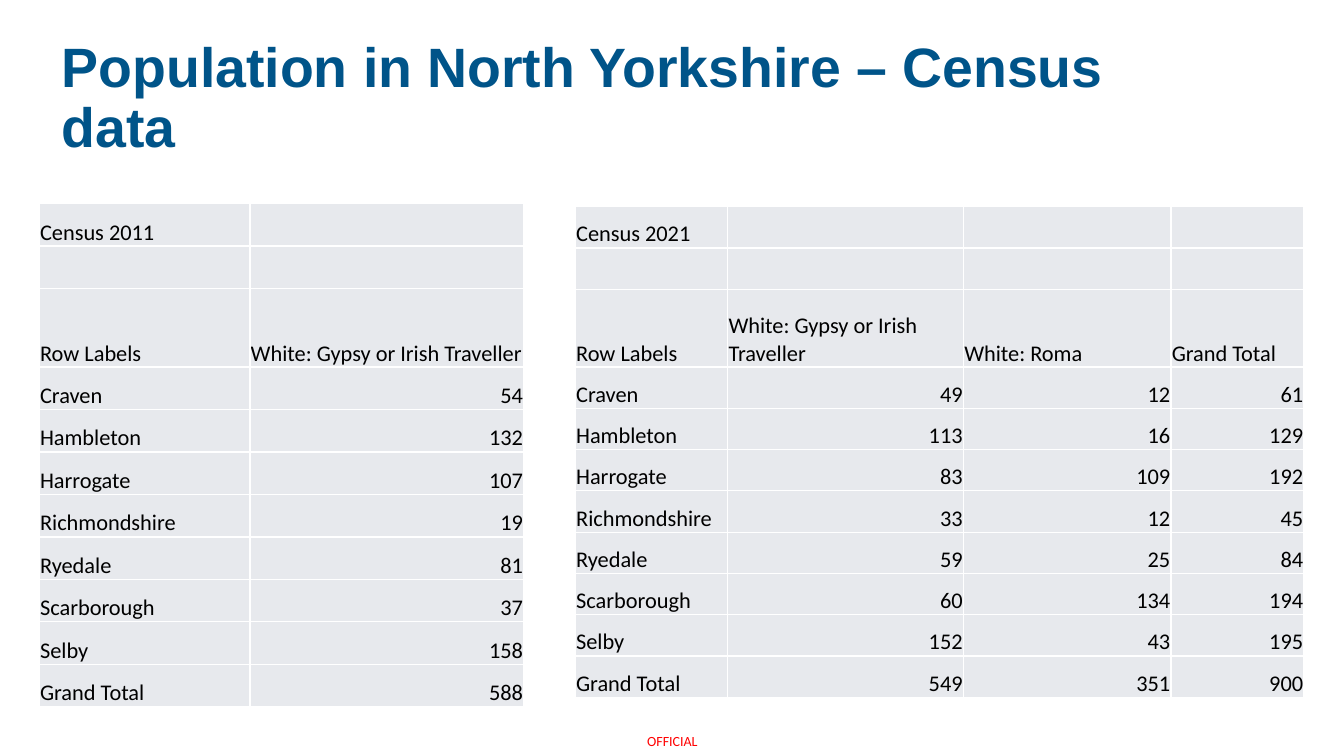
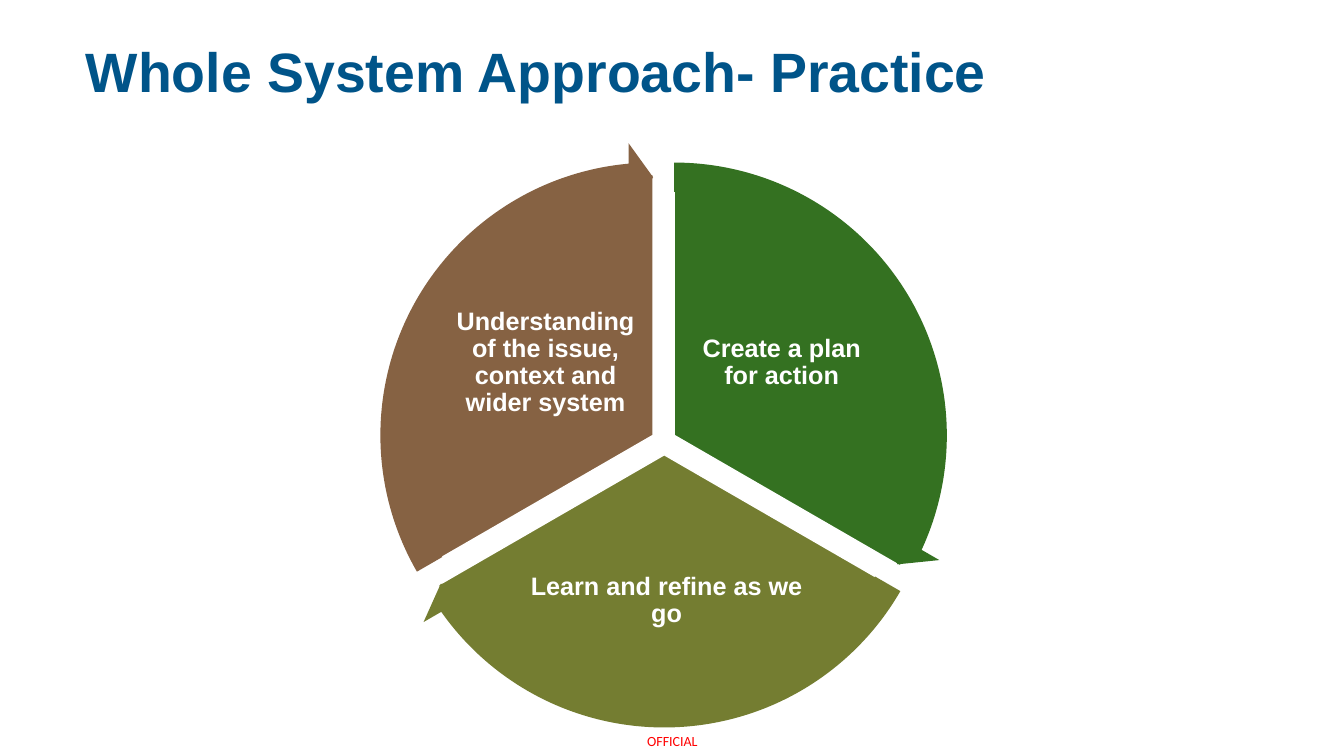
from lxml.etree import SubElement
from pptx import Presentation
from pptx.dml.color import RGBColor
from pptx.enum.shapes import MSO_SHAPE
from pptx.enum.text import MSO_ANCHOR, MSO_AUTO_SIZE, PP_ALIGN
from pptx.oxml.ns import qn
from pptx.util import Cm, Pt

COLOURS = {
    "title": "005489",
    "marking": "FF0000",
    "cell": "E7E9ED",
    "text": "000000",
    "white": "FFFFFF",
    "plan": "347121",
    "learn": "747D31",
    "understand": "866243",
}
HEADING_FONT, TABLE_FONT = "Arial", "Calibri"

DISTRICTS = ["Craven", "Hambleton", "Harrogate", "Richmondshire",
             "Ryedale", "Scarborough", "Selby"]
TRAVELLER = "White: Gypsy or Irish Traveller"
TRAVELLERS_2011 = [54, 132, 107, 19, 81, 37, 158]
TRAVELLERS_2021 = [49, 113, 83, 33, 59, 60, 152]
ROMA_2021 = [12, 16, 109, 12, 25, 134, 43]
HEADER_ROW = 2

# Stages of the cycle: text, colour, start angle, circle corner, label box (cm)
STAGES = [
    ("Create a plan for action", "plan", 270,
     (10.41, 4.39), (17.35, 7.19, 4.7, 3.91)),
    ("Learn and refine as we go", "learn", 30,
     (10.16, 4.88), (13.28, 13.41, 7.04, 3.45)),
    ("Understanding of the issue, context and wider system", "understand", 150,
     (9.88, 4.39), (11.4, 7.19, 4.7, 3.91)),
]
CIRCLE = 13.16
ARROW_MARGIN = 0.81
ARROWHEAD_ANGLE = 5.46


def colour(name):
    return RGBColor.from_string(COLOURS[name])


def write(frame, text, size, font, colour_name, bold=False,
          align=PP_ALIGN.LEFT, spacing=None):
    paragraph = frame.paragraphs[0]
    paragraph.alignment = align
    paragraph.line_spacing = spacing
    run = paragraph.add_run()
    run.text = text
    run.font.size = Pt(size)
    run.font.name = font
    run.font.bold = bold
    run.font.color.rgb = colour(colour_name)


def set_margins(target, margin):
    target.margin_left = target.margin_right = Cm(margin)
    target.margin_top = target.margin_bottom = Cm(margin)


def add_label(slide, box, margin, *args, **style):
    """Centred text box in a box given in cm."""
    label = slide.shapes.add_textbox(*map(Cm, box))
    frame = label.text_frame
    frame.word_wrap = True
    frame.vertical_anchor = MSO_ANCHOR.MIDDLE
    set_margins(frame, margin)
    write(frame, *args, align=PP_ALIGN.CENTER, **style)
    return label


def add_titled_slide(prs, text, left, top):
    slide = prs.slides.add_slide(prs.slide_layouts[5])
    title = slide.shapes.title
    title.left, title.top = Cm(left), Cm(top)
    title.width, title.height = Cm(29.21), Cm(1.96)
    frame = title.text_frame
    frame.auto_size = MSO_AUTO_SIZE.NONE
    frame.vertical_anchor = MSO_ANCHOR.MIDDLE
    write(frame, text, 39.6, HEADING_FONT, "title", bold=True, spacing=0.9)
    return slide


def add_marking(prs, slide):
    """Put the protective marking on the master, so every slide shows it."""
    marking = add_label(slide, (15.93, 18.31, 2.03, 0.74), 0,
                        "OFFICIAL", 10, TABLE_FONT, "marking")
    master_shapes = prs.slide_master.shapes
    next_id = max(shape.shape_id for shape in master_shapes) + 1
    marking.element.nvSpPr.cNvPr.set("id", str(next_id))
    master_shapes.element.append(marking.element)


def set_borders(cell):
    properties = cell._tc.get_or_add_tcPr()
    for position, side in enumerate(("lnL", "lnR", "lnT", "lnB")):
        line = SubElement(properties, qn(f"a:{side}"), w=str(Pt(1)))
        fill = SubElement(line, qn("a:solidFill"))
        SubElement(fill, qn("a:srgbClr"), val=COLOURS["white"])
        properties.insert(position, line)


def census_rows(heading, groups, with_total=False):
    """Heading, spacer and label rows, then the districts and their total."""
    columns = list(groups.values())
    labels = list(groups)
    if with_total:
        columns.append([sum(values) for values in zip(*columns)])
        labels.append("Grand Total")
    columns = [values + [sum(values)] for values in columns]
    blanks = [""] * len(columns)
    return [[heading, *blanks], ["", *blanks], ["Row Labels", *labels],
            *zip(DISTRICTS + ["Grand Total"], *columns)]


def add_census_table(slide, rows, left, top, widths, row_height, header_height):
    heights = [header_height if index == HEADER_ROW else row_height
               for index in range(len(rows))]
    table = slide.shapes.add_table(
        len(rows), len(widths), Cm(left), Cm(top),
        Cm(sum(widths)), Cm(sum(heights))).table
    table.first_row = table.horz_banding = False
    for column, width in zip(table.columns, widths):
        column.width = Cm(width)
    for row, height, values in zip(table.rows, heights, rows):
        row.height = Cm(height)
        for cell, value in zip(row.cells, values):
            cell.fill.solid()
            cell.fill.fore_color.rgb = colour("cell")
            cell.vertical_anchor = MSO_ANCHOR.BOTTOM
            set_margins(cell, 0.02)
            cell.margin_bottom = 0
            set_borders(cell)
            if value != "":
                is_count = isinstance(value, int)
                write(cell.text_frame, str(value), 16, TABLE_FONT, "text",
                      align=PP_ALIGN.RIGHT if is_count else PP_ALIGN.LEFT)


def angle(degrees):
    """Adjustment value of an angle: 60000ths of a degree over 100000."""
    return degrees * 0.6


def add_round_shape(slide, kind, left, top, size, fill, adjustments):
    shape = slide.shapes.add_shape(kind, Cm(left), Cm(top), Cm(size), Cm(size))
    shape.shadow.inherit = False
    shape.fill.solid()
    shape.fill.fore_color.rgb = colour(fill)
    shape.line.fill.background()
    for index, value in enumerate(adjustments):
        shape.adjustments[index] = value
    return shape


def add_cycle(slide):
    # Sectors with their labels
    for text, fill, start, (left, top), label_box in STAGES:
        end = (start + 120) % 360
        sector = add_round_shape(slide, MSO_SHAPE.PIE, left, top, CIRCLE, fill,
                                 (angle(start), angle(end)))
        sector.line.color.rgb = colour("white")
        sector.line.width = Pt(1)
        add_label(slide, label_box, 0.08, text, 18, HEADING_FONT, "white",
                  bold=True, spacing=0.9)
    # Arrows around the rim
    for _, fill, start, (left, top), _ in STAGES:
        end = (start + 120) % 360
        add_round_shape(
            slide, MSO_SHAPE.CIRCULAR_ARROW, left - ARROW_MARGIN,
            top - ARROW_MARGIN, CIRCLE + 2 * ARROW_MARGIN, fill,
            (0.05, angle(ARROWHEAD_ANGLE), angle(end - ARROWHEAD_ANGLE),
             angle(start), 0.06))


def main():
    prs = Presentation()
    prs.slide_width, prs.slide_height = Cm(33.87), Cm(19.05)

    # Census tables
    census = add_titled_slide(
        prs, "Population in North Yorkshire – Census data", 1.3, 1.52)
    add_marking(prs, census)
    add_census_table(
        census, census_rows("Census 2011", {TRAVELLER: TRAVELLERS_2011}),
        0.99, 5.13, [5.31, 6.9], 1.07, 1.98)
    add_census_table(
        census,
        census_rows("Census 2021", {TRAVELLER: TRAVELLERS_2021,
                                    "White: Roma": ROMA_2021}, with_total=True),
        14.5, 5.21, [3.84, 5.94, 5.23, 3.35], 1.04, 1.96)

    # Practice cycle
    practice = add_titled_slide(
        prs, "Whole System Approach- Practice", 1.91, 0.91)
    add_cycle(practice)

    prs.save("out.pptx")


if __name__ == "__main__":
    main()
